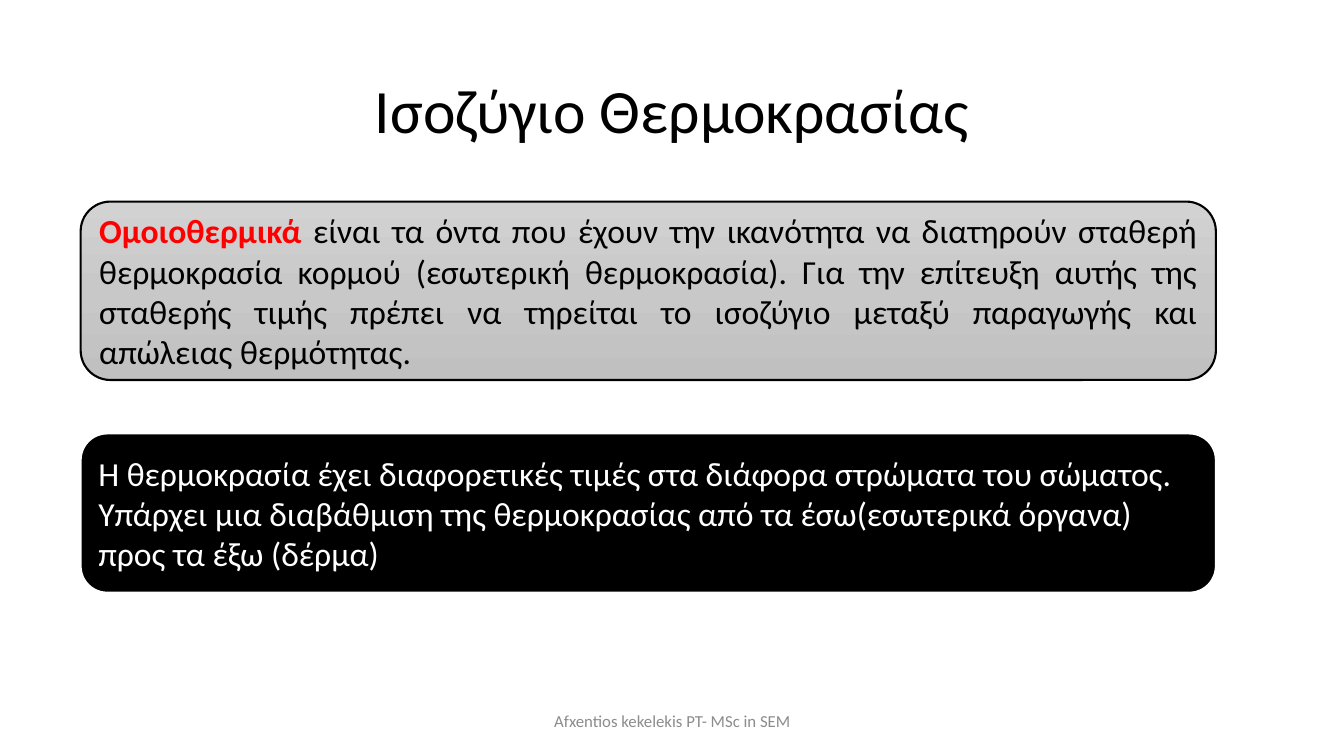
from copy import deepcopy
from dataclasses import dataclass

from pptx import Presentation
from pptx.dml.color import RGBColor
from pptx.enum.shapes import MSO_SHAPE
from pptx.enum.text import MSO_ANCHOR, PP_ALIGN
from pptx.oxml.ns import qn
from pptx.util import Inches, Pt


@dataclass(frozen=True)
class Theme:
    """Colours and type sizes of the slide."""
    font: str = "Calibri"
    black: str = "000000"
    white: str = "FFFFFF"
    accent: str = "FF0000"
    muted: str = "8C8C8C"
    grey_gradient: tuple = ((0, "D2D2D2"), (0.5, "C8C8C8"), (1, "C0C0C0"))
    title_size: int = 44
    body_size: int = 24
    footer_size: int = 12
    outline: float = 1.5


THEME = Theme()


def write_text(shape, text, *, size, color, align=PP_ALIGN.LEFT, bold=False, spacing=None):
    """Append a formatted run to the first paragraph of a shape."""
    frame = shape.text_frame
    frame.word_wrap = True
    frame.vertical_anchor = MSO_ANCHOR.MIDDLE
    paragraph = frame.paragraphs[0]
    paragraph.alignment = align
    paragraph.line_spacing = spacing
    run = paragraph.add_run()
    run.text = text
    run.font.name = THEME.font
    run.font.size = Pt(size)
    run.font.bold = bold
    run.font.color.rgb = RGBColor.from_string(color)


def fill_gradient(shape, stops):
    """Fill a shape with a three-stop gradient from top to bottom."""
    shape.fill.gradient()
    shape.fill.gradient_angle = 270
    stop_list = shape.element.spPr.find(".//" + qn("a:gsLst"))
    stop_list.insert(1, deepcopy(stop_list[0]))
    for stop, (position, color) in zip(shape.fill.gradient_stops, stops):
        stop.position = position
        stop.color.rgb = RGBColor.from_string(color)


def add_panel(slide, box, line_color):
    """Add a rounded panel with an outline and no shadow."""
    panel = slide.shapes.add_shape(MSO_SHAPE.ROUNDED_RECTANGLE, *map(Inches, box))
    panel.shadow.inherit = False
    panel.line.color.rgb = RGBColor.from_string(line_color)
    panel.line.width = Pt(THEME.outline)
    return panel


def add_title(slide, box):
    """Add the centred slide title."""
    title = slide.shapes.add_textbox(*map(Inches, box))
    write_text(title, "Ισοζύγιο Θερμοκρασίας", size=THEME.title_size,
               color=THEME.black, align=PP_ALIGN.CENTER, spacing=0.9)


def add_footer(slide, box):
    """Add the centred author line."""
    footer = slide.shapes.add_textbox(*map(Inches, box))
    write_text(footer, "Afxentios kekelekis PT- MSc in SEM", size=THEME.footer_size,
               color=THEME.muted, align=PP_ALIGN.CENTER)


def add_definition(slide, box):
    """Add the grey panel that defines homeothermic beings."""
    panel = add_panel(slide, box, THEME.black)
    fill_gradient(panel, THEME.grey_gradient)
    write_text(panel, "Ομοιοθερμικά ", size=THEME.body_size, color=THEME.accent,
               align=PP_ALIGN.JUSTIFY, bold=True)
    write_text(panel, "είναι τα όντα που έχουν την ικανότητα να διατηρούν σταθερή "
               "θερμοκρασία κορμού (εσωτερική θερμοκρασία). Για την επίτευξη αυτής της "
               "σταθερής τιμής πρέπει να τηρείται το ισοζύγιο μεταξύ παραγωγής και "
               "απώλειας θερμότητας.", size=THEME.body_size, color=THEME.black,
               align=PP_ALIGN.JUSTIFY)


def add_layers_note(slide, box):
    """Add the black panel about temperature across body layers."""
    panel = add_panel(slide, box, THEME.white)
    panel.fill.solid()
    panel.fill.fore_color.rgb = RGBColor.from_string(THEME.black)
    write_text(panel, "Η θερμοκρασία έχει διαφορετικές τιμές στα διάφορα στρώματα του "
               "σώματος. Υπάρχει μια διαβάθμιση της θερμοκρασίας από τα "
               "έσω(εσωτερικά όργανα) προς τα έξω (δέρμα)",
               size=THEME.body_size, color=THEME.white)


def main():
    """Build the slide and save it."""
    presentation = Presentation()
    presentation.slide_width = Inches(13.33)
    presentation.slide_height = Inches(7.5)
    slide = presentation.slides.add_slide(presentation.slide_layouts[6])
    panel_left, panel_width = 0.8, 11.26
    add_title(slide, (0.92, 0.4, 11.5, 1.45))
    add_footer(slide, (4.42, 6.95, 4.5, 0.4))
    add_definition(slide, (panel_left, 2, panel_width, 1.77))
    add_layers_note(slide, (panel_left, 4.3, panel_width, 1.58))
    presentation.save("out.pptx")


if __name__ == "__main__":
    main()
